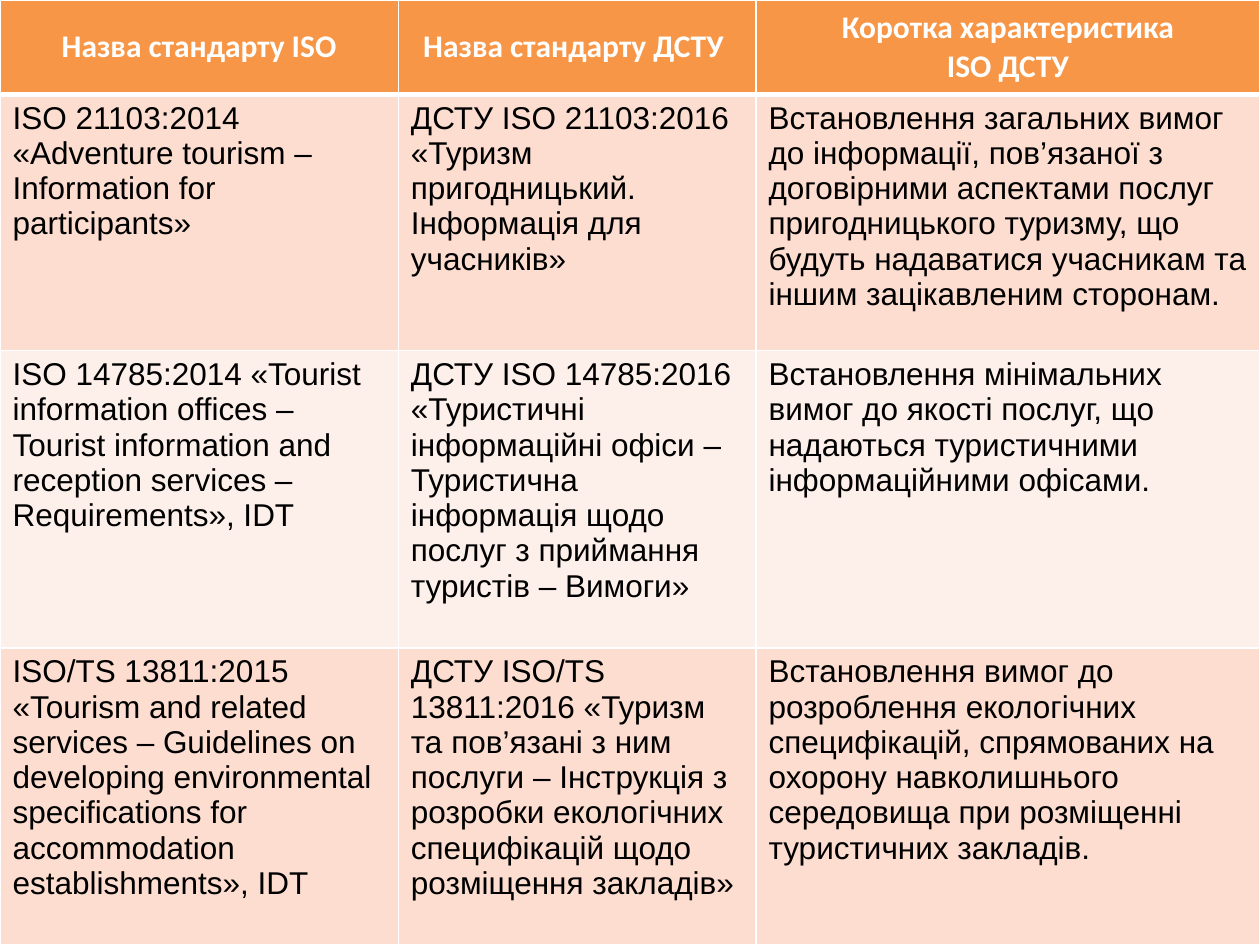
from lxml.etree import SubElement
from pptx import Presentation
from pptx.dml.color import RGBColor
from pptx.enum.text import MSO_ANCHOR, PP_ALIGN
from pptx.oxml.ns import qn
from pptx.util import Cm, Pt

HEADINGS = (
    "Назва стандарту ISO",
    "Назва стандарту ДСТУ ",
    "Коротка характеристика\nISO ДСТУ",
)
STANDARDS = (
    (
        "ISO 21103:2014 «Adventure tourism – Information for participants»",
        "ДСТУ ISO 21103:2016 «Туризм пригодницький. Інформація для учасників»",
        "Встановлення загальних вимог до інформації, пов’язаної з договірними "
        "аспектами послуг пригодницького туризму, що будуть надаватися "
        "учасникам та іншим зацікавленим сторонам.",
    ),
    (
        "ISO 14785:2014 «Tourist information offices – Tourist information "
        "and reception services – Requirements», IDT",
        "ДСТУ ISO 14785:2016 «Туристичні інформаційні офіси – Туристична "
        "інформація щодо послуг з приймання туристів – Вимоги»",
        "Встановлення мінімальних вимог до якості послуг, що надаються "
        "туристичними інформаційними офісами.",
    ),
    (
        "ISO/TS 13811:2015 «Tourism and related services – Guidelines on "
        "developing environmental specifications for accommodation "
        "establishments», IDT",
        "ДСТУ ISO/TS 13811:2016 «Туризм та пов’язані з ним послуги – "
        "Інструкція з розробки екологічних специфікацій щодо розміщення "
        "закладів»",
        "Встановлення вимог до розроблення екологічних специфікацій, "
        "спрямованих на охорону навколишнього середовища при розміщенні "
        "туристичних закладів.",
    ),
)
COLUMN_WIDTHS = (8.03, 7.21, 10.16)
ROW_HEIGHTS = (1.9, 5.17, 5.99, 5.99)
COLORS = {
    "heading": "F79646",
    "odd": "FCDDCF",
    "even": "FDEFE9",
    "line": "FFFFFF",
    "heading_text": "FFFFFF",
    "body_text": "000000",
}


def color(name):
    return RGBColor.from_string(COLORS[name])


def set_borders(cell, widths):
    """Draw borders; widths maps the sides L, R, T and B to points."""
    properties = cell._tc.get_or_add_tcPr()
    for side, width in widths.items():
        line = SubElement(properties, qn(f"a:ln{side}"), w=str(Pt(width)))
        fill = SubElement(line, qn("a:solidFill"))
        SubElement(fill, qn("a:srgbClr"), val=COLORS["line"])


def fill_cell(cell, text, row):
    is_heading = row == 0
    set_borders(cell, {"L": 1, "R": 1, "T": 3 if row == 1 else 1,
                       "B": 3 if is_heading else 1})
    band = "heading" if is_heading else ("odd" if row % 2 else "even")
    cell.fill.solid()
    cell.fill.fore_color.rgb = color(band)
    cell.vertical_anchor = MSO_ANCHOR.MIDDLE if is_heading else MSO_ANCHOR.TOP
    cell.text = text
    for paragraph in cell.text_frame.paragraphs:
        paragraph.alignment = PP_ALIGN.CENTER if is_heading else PP_ALIGN.LEFT
        font = paragraph.font
        font.name = "Calibri" if is_heading else "Arial"
        font.size = Pt(18)
        font.bold = is_heading
        font.color.rgb = color("heading_text" if is_heading else "body_text")


def main():
    deck = Presentation()
    deck.slide_width, deck.slide_height = Cm(25.4), Cm(19.05)
    slide = deck.slides.add_slide(deck.slide_layouts[6])
    rows = (HEADINGS, *STANDARDS)
    table = slide.shapes.add_table(
        len(rows), len(HEADINGS), 0, 0, deck.slide_width, deck.slide_height
    ).table
    for column, width in zip(table.columns, COLUMN_WIDTHS):
        column.width = Cm(width)
    for row, height in zip(table.rows, ROW_HEIGHTS):
        row.height = Cm(height)
    for r, texts in enumerate(rows):
        for c, text in enumerate(texts):
            fill_cell(table.cell(r, c), text, r)
    deck.save("out.pptx")


if __name__ == "__main__":
    main()
